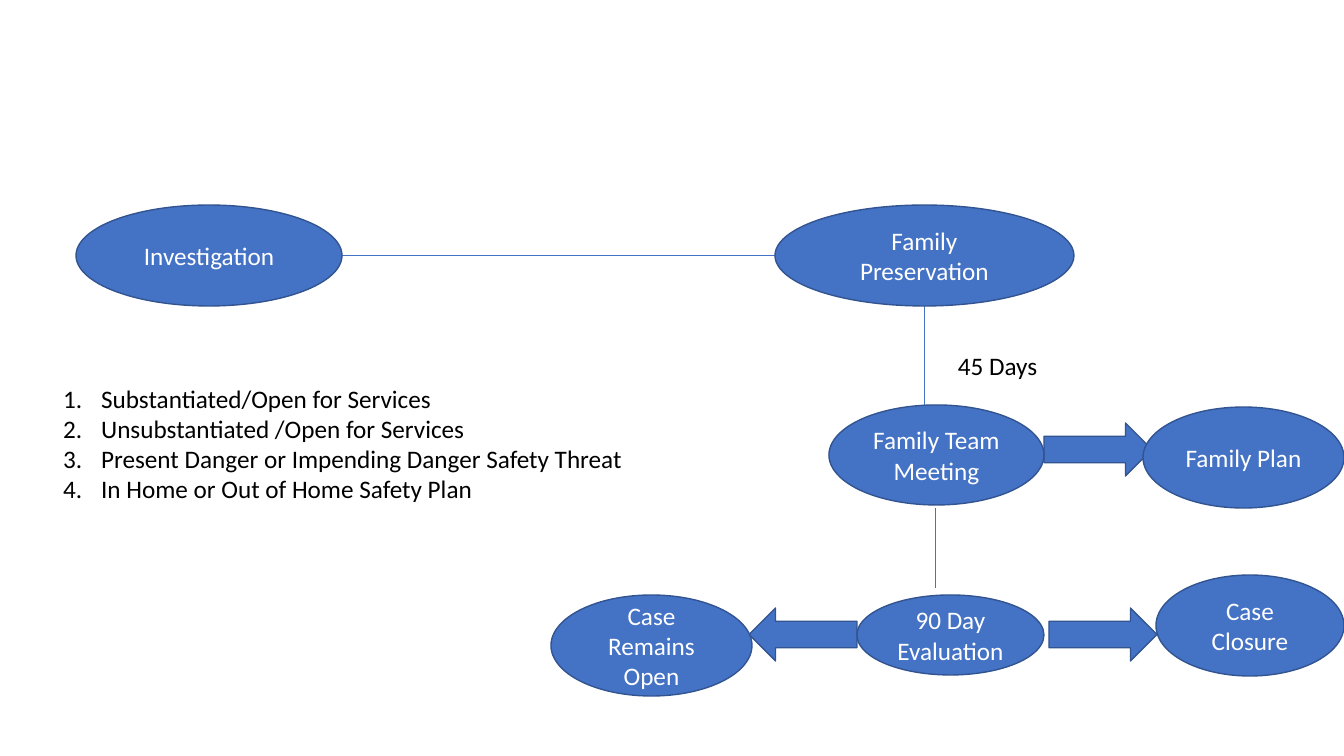
from lxml import etree
from pptx import Presentation
from pptx import util as u
from pptx.dml.color import RGBColor
from pptx.enum import shapes, text
from pptx.oxml.ns import qn

COLORS = {"fill": "4472C4", "outline": "325491", "light": "FFFFFF", "dark": "000000"}
SCALE = 914400 / 100.8
SLIDE = (1344, 756)

LINES = [
    (342, 255, 775, 255),
    (924, 405, 924, 305),
    (935, 508, 935, 588),
]
ARROW_SIZE = (108, 53)
ARROWS = [
    ("RIGHT_ARROW", 1044, 423),
    ("RIGHT_ARROW", 1049, 608),
    ("LEFT_ARROW", 749, 608),
]
STEPS = [
    ("Investigation", (76, 205, 266, 101)),
    ("Family Preservation", (775, 205, 299, 101)),
    ("Family Team Meeting", (829, 405, 215, 100)),
    ("Family Plan", (1143, 407, 201, 101)),
    ("90 Day Evaluation", (857, 595, 187, 80)),
    ("Case Closure", (1156, 575, 188, 101)),
    ("Case Remains Open", (551, 595, 201, 101)),
]
DEADLINE = ("45 Days", (948, 345, 101, 40))
OUTCOMES = [
    "Substantiated/Open for Services",
    "Unsubstantiated /Open for Services",
    "Present Danger or Impending Danger Safety Threat",
    "In Home or Out of Home Safety Plan",
]
OUTCOMES_BOX = (53, 378, 586, 132)
INDENT = 38


def px(*values):
    return [u.Emu(round(v * SCALE)) for v in values]


def rgb(name):
    return RGBColor.from_string(COLORS[name])


def write(p, words, color="dark", align=text.PP_ALIGN.LEFT, size=18, font="Calibri"):
    p.alignment = align
    p.line_spacing = 1.0
    p.space_before = p.space_after = u.Pt(0)
    r = p.add_run()
    r.text = words
    r.font.size = u.Pt(size)
    r.font.name = font
    r.font.color.rgb = rgb(color)


def add_block(s, kind, box):
    sp = s.shapes.add_shape(kind, *px(*box))
    sp.shadow.inherit = False
    sp.fill.solid()
    sp.fill.fore_color.rgb = rgb("fill")
    sp.line.color.rgb = rgb("outline")
    sp.line.width = u.Pt(1)
    return sp


def number(p):
    pPr = p._p.get_or_add_pPr()
    indent = px(INDENT)[0]
    pPr.set("marL", str(indent))
    pPr.set("indent", str(-indent))
    etree.SubElement(pPr, qn("a:buFont"), typeface="+mj-lt")
    etree.SubElement(pPr, qn("a:buAutoNum"), type="arabicPeriod")


def main():
    prs = Presentation()
    prs.slide_width, prs.slide_height = px(*SLIDE)
    s = prs.slides.add_slide(prs.slide_layouts[1])
    title = s.shapes.title._element
    title.getparent().remove(title)

    body = s.placeholders[1]
    body.left, body.top, body.width, body.height = px(*OUTCOMES_BOX)
    tf = body.text_frame
    tf.word_wrap = True
    tf.auto_size = text.MSO_AUTO_SIZE.NONE
    tf.vertical_anchor = text.MSO_ANCHOR.TOP
    for i, outcome in enumerate(OUTCOMES):
        p = tf.add_paragraph() if i else tf.paragraphs[0]
        number(p)
        write(p, outcome)

    for ends in LINES:
        line = s.shapes.add_connector(shapes.MSO_CONNECTOR.STRAIGHT, *px(*ends))
        line.line.color.rgb = rgb("fill")
        line.line.width = u.Pt(0.5)
        etree.SubElement(line._element.spPr, qn("a:effectLst"))

    for kind, left, top in ARROWS:
        add_block(s, shapes.MSO_SHAPE[kind], (left, top, *ARROW_SIZE))

    for label, box in STEPS:
        tf = add_block(s, shapes.MSO_SHAPE.OVAL, box).text_frame
        tf.word_wrap = True
        tf.vertical_anchor = text.MSO_ANCHOR.MIDDLE
        write(tf.paragraphs[0], label, color="light", align=text.PP_ALIGN.CENTER)

    label, box = DEADLINE
    tf = s.shapes.add_textbox(*px(*box)).text_frame
    tf.word_wrap = False
    write(tf.paragraphs[0], label)

    prs.save("out.pptx")


if __name__ == "__main__":
    main()
